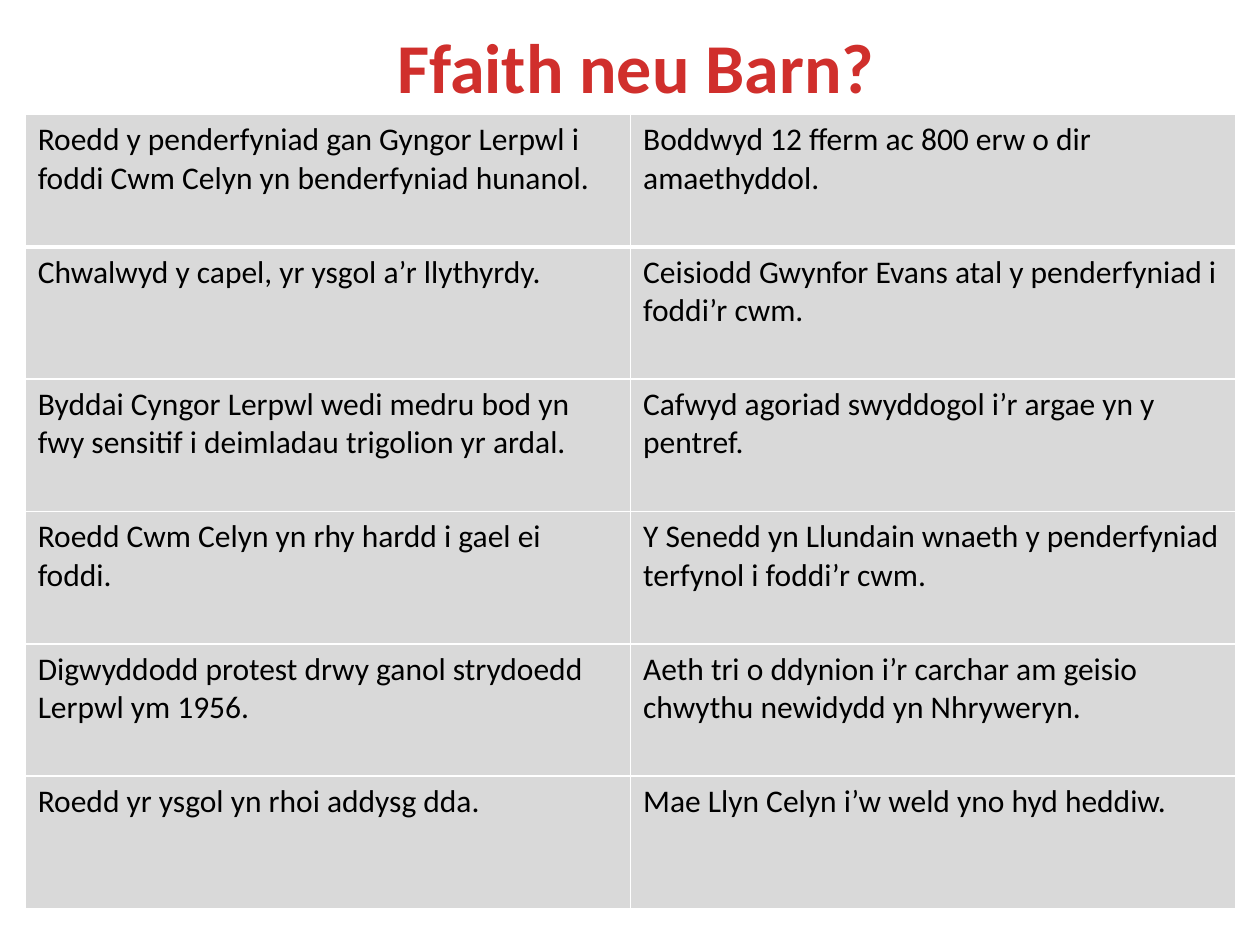
from typing import NamedTuple

from lxml.etree import SubElement
from pptx import Presentation
from pptx.dml.color import RGBColor
from pptx.enum.text import MSO_ANCHOR, MSO_AUTO_SIZE, PP_ALIGN
from pptx.oxml.ns import qn
from pptx.util import Inches, Pt

RED = RGBColor(0xD0, 0x2F, 0x2C)
BLACK = RGBColor(0x00, 0x00, 0x00)
GREY = RGBColor(0xD9, 0xD9, 0xD9)
WHITE = RGBColor(0xFF, 0xFF, 0xFF)

TITLE_FONT = {"name": "Calibri", "size": Pt(40), "bold": True}
CELL_FONT = {"name": "Calibri", "size": Pt(18), "bold": False}
TITLE_FRAME = {
    "word_wrap": True,
    "auto_size": MSO_AUTO_SIZE.NONE,
    "vertical_anchor": MSO_ANCHOR.TOP,
}
TITLE_BOX = {
    "left": Inches(1.85),
    "top": Inches(0.14),
    "width": Inches(6.39),
    "height": Inches(0.77),
}


class StatementPair(NamedTuple):
    left: str
    right: str


STATEMENTS = [
    StatementPair(
        "Roedd y penderfyniad gan Gyngor Lerpwl i foddi Cwm Celyn yn benderfyniad hunanol.",
        "Boddwyd 12 fferm ac 800 erw o dir amaethyddol.",
    ),
    StatementPair(
        "Chwalwyd y capel, yr ysgol a’r llythyrdy.",
        "Ceisiodd Gwynfor Evans atal y penderfyniad i foddi’r cwm.",
    ),
    StatementPair(
        "Byddai Cyngor Lerpwl wedi medru bod yn fwy sensitif i deimladau trigolion yr ardal.",
        "Cafwyd agoriad swyddogol i’r argae yn y pentref.",
    ),
    StatementPair(
        "Roedd Cwm Celyn yn rhy hardd i gael ei foddi.",
        "Y Senedd yn Llundain wnaeth y penderfyniad terfynol i foddi’r cwm.",
    ),
    StatementPair(
        "Digwyddodd protest drwy ganol strydoedd Lerpwl ym 1956.",
        "Aeth tri o ddynion i’r carchar am geisio chwythu newidydd yn Nhryweryn.",
    ),
    StatementPair(
        "Roedd yr ysgol yn rhoi addysg dda.",
        "Mae Llyn Celyn i’w weld yno hyd heddiw.",
    ),
]


def set_attributes(target: object, values: dict) -> None:
    for name, value in values.items():
        setattr(target, name, value)


def set_font(font, values: dict, color: RGBColor) -> None:
    set_attributes(font, values)
    font.color.rgb = color


def set_borders(cell, top: float, bottom: float) -> None:
    properties = cell._tc.get_or_add_tcPr()
    widths = {"a:lnL": 1, "a:lnR": 1, "a:lnT": top, "a:lnB": bottom}
    for position, (tag, width) in enumerate(widths.items()):
        line = SubElement(properties, qn(tag), w=str(Pt(width)))
        fill = SubElement(line, qn("a:solidFill"))
        SubElement(fill, qn("a:srgbClr"), val=str(WHITE))
        properties.insert(position, line)


def add_title(slide, text: str) -> None:
    title = slide.shapes.title
    set_attributes(title, TITLE_BOX)
    set_attributes(title.text_frame, TITLE_FRAME)
    title.text_frame.text = text
    paragraph = title.text_frame.paragraphs[0]
    paragraph.alignment = PP_ALIGN.CENTER
    set_font(paragraph.runs[0].font, TITLE_FONT, RED)


def add_statement_table(slide, statements: list[StatementPair]) -> None:
    table = slide.shapes.add_table(
        len(statements), 2, Inches(0.2), Inches(0.91), Inches(9.61), Inches(6.3)
    ).table
    set_attributes(table, {"first_row": False, "horz_banding": False})
    for row, pair in enumerate(statements):
        for column, text in enumerate(pair):
            cell = table.cell(row, column)
            cell.text = text
            set_font(cell.text_frame.paragraphs[0].runs[0].font, CELL_FONT, BLACK)
            cell.fill.solid()
            cell.fill.fore_color.rgb = GREY
            set_borders(cell, 3 if row == 1 else 1, 3 if row == 0 else 1)


def main() -> None:
    presentation = Presentation()
    set_attributes(
        presentation, {"slide_width": Inches(10), "slide_height": Inches(7.5)}
    )
    slide = presentation.slides.add_slide(presentation.slide_layouts[5])
    add_title(slide, "Ffaith neu Barn?")
    add_statement_table(slide, STATEMENTS)
    presentation.save("out.pptx")


if __name__ == "__main__":
    main()
